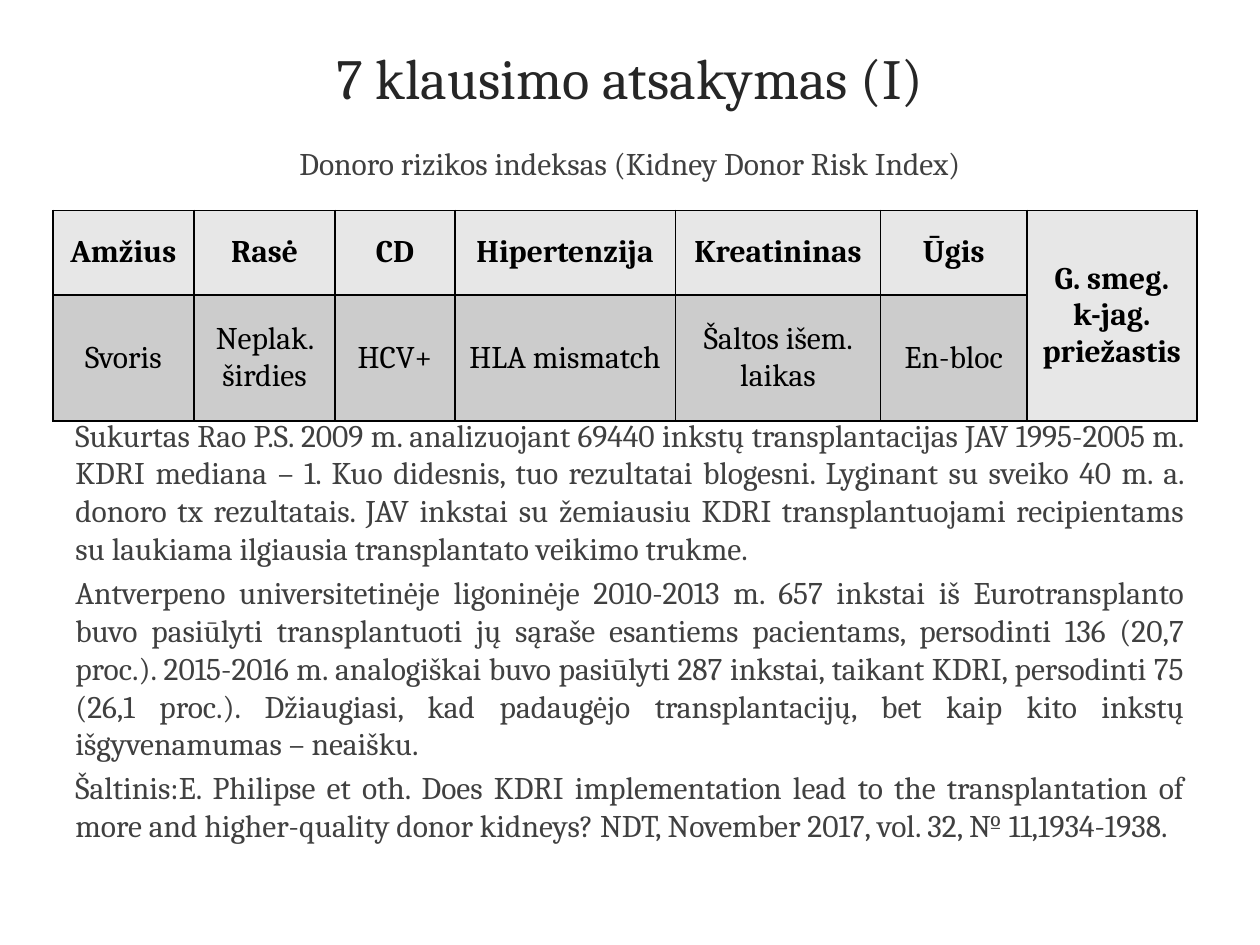
from dataclasses import dataclass

from lxml.etree import SubElement
from pptx import Presentation
from pptx.dml.color import RGBColor
from pptx.enum.text import MSO_ANCHOR as Anchor, PP_ALIGN as Align
from pptx.oxml.ns import qn
from pptx.util import Inches, Pt


@dataclass(frozen=True)
class Theme:
    font: str = "Cambria"
    title_size: float = 32.4
    text_size: float = 18
    title: str = "262626"
    text: str = "404040"
    table_text: str = "000000"
    border: str = "000000"
    header_fill: str = "E7E7E7"
    row_fill: str = "CCCCCC"


THEME = Theme()


def write(frame, texts, size, color, align, bold=False):
    """Fill a text frame with one paragraph per text, all styled alike."""
    frame.word_wrap = True
    for index, text in enumerate(texts):
        para = frame.paragraphs[0] if index == 0 else frame.add_paragraph()
        para.text = text
        para.alignment = align
        if index:
            para.space_before = Pt(3.6)
        para.font.name = THEME.font
        para.font.size = Pt(size)
        para.font.bold = bold
        para.font.color.rgb = RGBColor.from_string(color)


def draw_borders(cell):
    properties = cell._tc.get_or_add_tcPr()
    for position, side in enumerate(("a:lnL", "a:lnR", "a:lnT", "a:lnB")):
        line = SubElement(properties, qn(side), w=str(Pt(1)))
        fill = SubElement(line, qn("a:solidFill"))
        SubElement(fill, qn("a:srgbClr"), val=THEME.border)
        properties.insert(position, line)  # borders come before the cell fill


deck = Presentation()
deck.slide_width, deck.slide_height = Inches(10), Inches(7.5)
page = deck.slides.add_slide(deck.slide_layouts[6])

# Title, subtitle and body text share one column
body = [
    "Sukurtas Rao P.S. 2009 m. analizuojant 69440 inkstų transplantacijas JAV 1995-2005 m. "
    "KDRI mediana – 1. Kuo didesnis, tuo rezultatai blogesni. Lyginant su sveiko 40 m. a. "
    "donoro tx rezultatais. JAV inkstai su žemiausiu KDRI transplantuojami recipientams "
    "su laukiama ilgiausia transplantato veikimo trukme.",
    "Antverpeno universitetinėje ligoninėje 2010-2013 m. 657 inkstai iš Eurotransplanto "
    "buvo pasiūlyti transplantuoti jų sąraše esantiems pacientams, persodinti 136 (20,7 "
    "proc.). 2015-2016 m. analogiškai buvo pasiūlyti 287 inkstai, taikant KDRI, persodinti 75 "
    "(26,1 proc.). Džiaugiasi, kad padaugėjo transplantacijų, bet kaip kito inkstų "
    "išgyvenamumas – neaišku.",
    "Šaltinis:E. Philipse et oth. Does KDRI implementation lead to the transplantation of "
    "more and higher-quality donor kidneys? NDT, November 2017, vol. 32, № 11,1934-1938.",
]
blocks = [
    (0.3, 0.62, ["7 klausimo atsakymas (I)"], THEME.title_size, THEME.title, Align.CENTER, Anchor.MIDDLE),
    (1.09, 0.45, ["Donoro rizikos indeksas (Kidney Donor Risk Index)"],
     THEME.text_size, THEME.text, Align.CENTER, Anchor.TOP),
    (3.25, 3.36, body, THEME.text_size, THEME.text, Align.JUSTIFY, Anchor.TOP),
]
for top, height, texts, size, color, align, anchor in blocks:
    box = page.shapes.add_textbox(Inches(0.5), Inches(top), Inches(9), Inches(height))
    box.text_frame.vertical_anchor = anchor
    write(box.text_frame, texts, size, color, align)

# Risk factor table
factors = [
    ["Amžius", "Rasė", "CD", "Hipertenzija", "Kreatininas", "Ūgis", "G. smeg. k-jag. priežastis"],
    ["Svoris", "Neplak. širdies", "HCV+", "HLA mismatch", "Šaltos išem. laikas", "En-bloc", ""],
]
widths = [1.12, 1.12, 0.95, 1.75, 1.63, 1.16, 1.35]
heights = [0.67, 0.93]
table = page.shapes.add_table(
    len(heights), len(widths), Inches(0.42), Inches(1.67),
    Inches(sum(widths)), Inches(sum(heights))).table
for column, width in zip(table.columns, widths):
    column.width = Inches(width)
for row, height in zip(table.rows, heights):
    row.height = Inches(height)

for row_index, labels in enumerate(factors):
    is_header = row_index == 0
    fill = THEME.header_fill if is_header else THEME.row_fill
    for column_index, label in enumerate(labels):
        cell = table.cell(row_index, column_index)
        cell.vertical_anchor = Anchor.MIDDLE
        cell.fill.solid()
        cell.fill.fore_color.rgb = RGBColor.from_string(fill)
        write(cell.text_frame, [label], THEME.text_size, THEME.table_text, Align.CENTER, is_header)
        draw_borders(cell)
table.cell(0, 6).merge(table.cell(1, 6))

deck.save("out.pptx")
